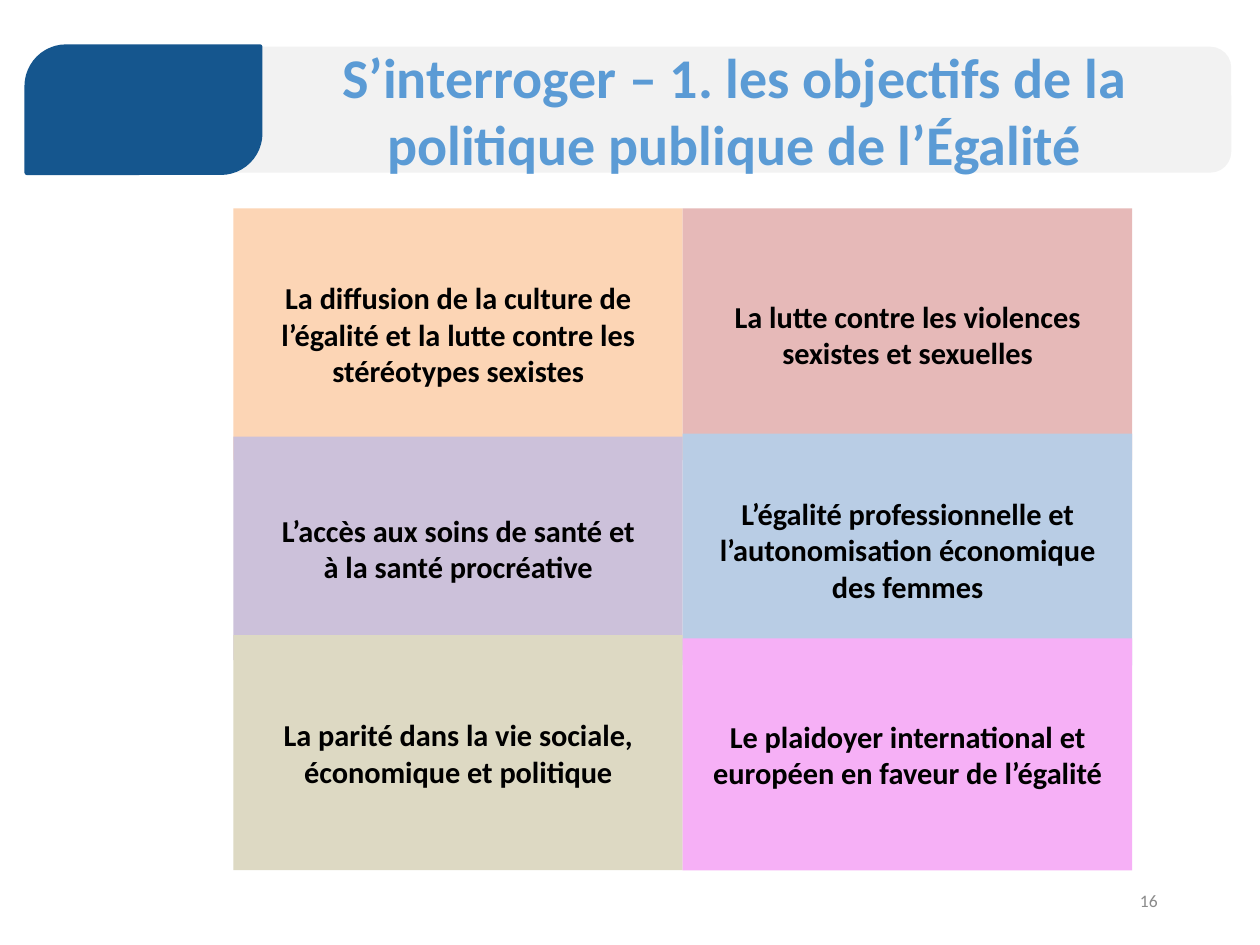
from dataclasses import dataclass

from pptx import Presentation
from pptx.dml.color import RGBColor
from pptx.enum import shapes, text
from pptx.util import Pt


@dataclass(frozen=True)
class Theme:
    font: str = "Calibri"
    title_size: float = 24
    tile_size: float = 13
    number_size: float = 7.5
    title: str = "5B9BD5"
    tile_text: str = "000000"
    number: str = "8B8B8B"
    banner: str = "F2F2F2"
    badge: str = "15568E"


@dataclass(frozen=True)
class Box:
    left: float
    top: float
    width: float
    height: float


@dataclass(frozen=True)
class Tile:
    column: int
    top: float
    height: float
    fill: str
    wording: str


THEME = Theme()
GRID_LEFT, COLUMN_WIDTH = 100, 192.6

TILES = [
    Tile(0, 89.3, 108, "FCD5B5",
         "La diffusion de la culture de l’égalité et la lutte contre les stéréotypes sexistes"),
    Tile(1, 89.3, 108, "E6B9B8", "La lutte contre les violences sexistes et sexuelles"),
    Tile(0, 187.2, 95.8, "CCC1DA", "L’accès aux soins de santé et\nà la santé procréative"),
    Tile(1, 185.8, 99.4, "B9CDE5",
         "L’égalité professionnelle et l’autonomisation économique\ndes femmes"),
    Tile(0, 272.2, 100.8, "DDD9C3", "La parité dans la vie sociale, économique et politique"),
    Tile(1, 273.6, 99.4, "F6B0F6",
         "Le plaidoyer international et européen en faveur de l’égalité"),
]


def place(shape, box: Box) -> None:
    shape.left, shape.top = Pt(box.left), Pt(box.top)
    shape.width, shape.height = Pt(box.width), Pt(box.height)


def write(shape, wording: str, size: float, color: str, bold: bool, alignment) -> None:
    frame = shape.text_frame
    frame.text = wording
    frame.word_wrap = True
    frame.auto_size = text.MSO_AUTO_SIZE.NONE
    frame.vertical_anchor = text.MSO_ANCHOR.MIDDLE
    for paragraph in frame.paragraphs:
        paragraph.alignment = alignment
        paragraph.font.name = THEME.font
        paragraph.font.size = Pt(size)
        paragraph.font.bold = bold
        paragraph.font.color.rgb = RGBColor.from_string(color)


def add_block(slide, kind, box: Box, fill: str):
    shape = slide.shapes.add_shape(kind, 0, 0, 0, 0)
    place(shape, box)
    shape.shadow.inherit = False
    shape.fill.solid()
    shape.fill.fore_color.rgb = RGBColor.from_string(fill)
    shape.line.fill.background()
    return shape


def add_header(slide) -> None:
    banner = add_block(slide, shapes.MSO_SHAPE.ROUNDED_RECTANGLE,
                       Box(82, 20, 445.7, 54), THEME.banner)
    banner.adjustments[0] = 0.167
    badge = add_block(slide, shapes.MSO_SHAPE.ROUND_2_DIAG_RECTANGLE,
                      Box(11.5, 20, 100, 54), THEME.badge)
    badge.adjustments[0], badge.adjustments[1] = 0.313, 0
    badge.line.color.rgb = RGBColor.from_string(THEME.badge)
    badge.line.width = Pt(2)

    # The title stands in front of the banner
    title = slide.shapes.title
    title.element.getparent().append(title.element)
    place(title, Box(88.6, 20, 436.3, 54))
    write(title, "S’interroger – 1. les objectifs de la politique publique de l’Égalité",
          THEME.title_size, THEME.title, True, text.PP_ALIGN.CENTER)
    properties = title.text_frame.paragraphs[0]._p.get_or_add_pPr()
    properties.set("marL", str(Pt(16)))
    properties.set("indent", "0")


def add_tile(slide, tile: Tile) -> None:
    left = GRID_LEFT + tile.column * COLUMN_WIDTH
    shape = add_block(slide, shapes.MSO_SHAPE.RECTANGLE,
                      Box(left, tile.top, COLUMN_WIDTH, tile.height), tile.fill)
    write(shape, tile.wording, THEME.tile_size, THEME.tile_text, True, text.PP_ALIGN.CENTER)


def add_page_number(slide, number: str) -> None:
    shape = slide.shapes.add_textbox(0, 0, 0, 0)
    place(shape, Box(381.6, 375, 121.7, 21.6))
    write(shape, number, THEME.number_size, THEME.number, False, text.PP_ALIGN.RIGHT)


def main() -> None:
    presentation = Presentation()
    presentation.slide_width, presentation.slide_height = Pt(540), Pt(405)
    title_only = presentation.slide_layouts[5]
    slide = presentation.slides.add_slide(title_only)

    # Header, page number, then the six objectives
    add_header(slide)
    add_page_number(slide, "16")
    for tile in TILES:
        add_tile(slide, tile)

    presentation.save("out.pptx")


if __name__ == "__main__":
    main()
